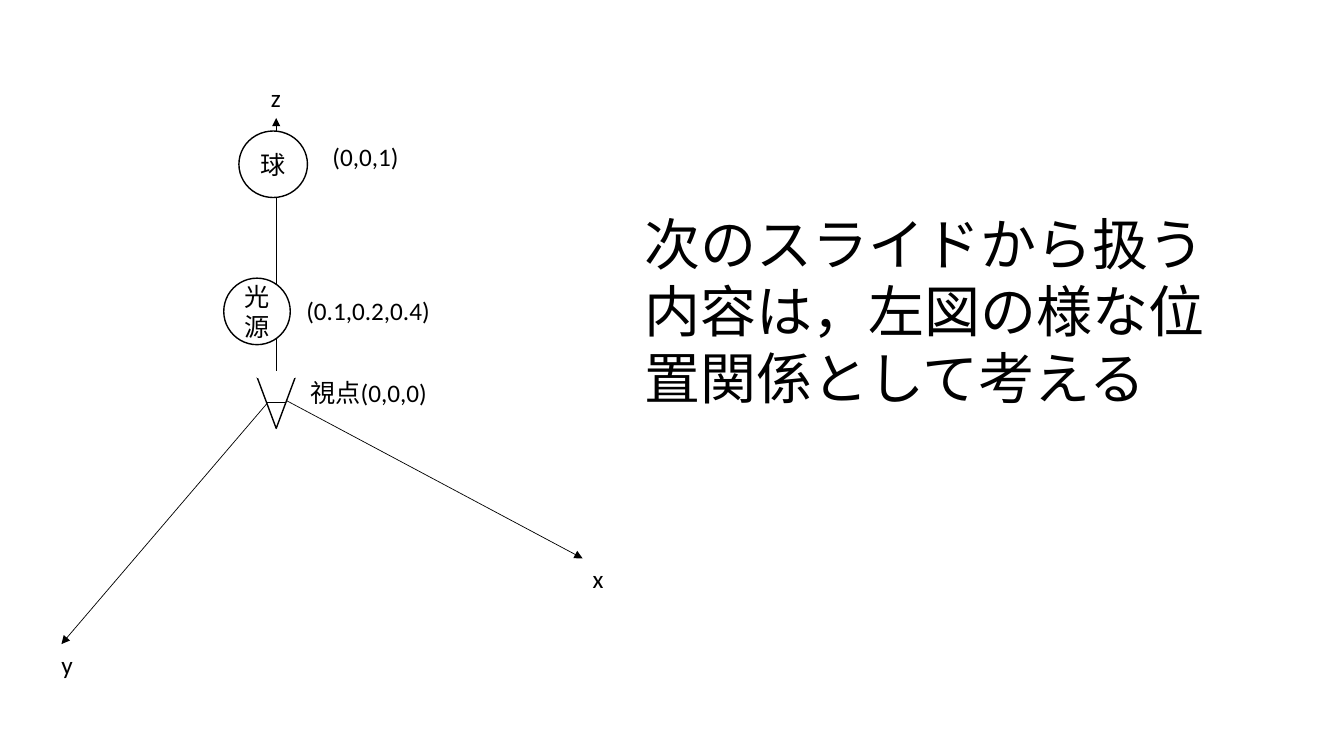
from pptx import Presentation
from pptx import util as u
from pptx.dml.color import RGBColor
from pptx.enum import shapes, text
from pptx.oxml.ns import qn
from lxml import etree

COLORS = {"ink": "000000", "paper": "FFFFFF"}
FONT = "Calibri"
CELL = 0.1
COLS, ROWS = 133.33, 75

ORIGIN = (27.4, 39.2)
AXES = [
    ((27.2, 39.2), (6.1, 63.9)),
    (ORIGIN, (57.8, 55.4)),
    (ORIGIN, (27.4, 11.7)),
]
EYE = (25.5, 37.4, 3.8, 5.1)
EYE_GAP = 0.5
SPHERES = [
    ("光源", (22.2, 27.6, 6.6, 6.6)),
    ("球", (23.7, 13, 6.8, 6.6)),
]
LABELS = [
    ("x", (57.8, 55.4, 9.4, 4), 18),
    ("z", (25.9, 7.7, 9.4, 4), 18),
    ("y", (5.1, 63.9, 9.4, 4), 18),
    ("視点(0,0,0)", (29.8, 36.9, 15.7, 4), 18),
    ("(0.1,0.2,0.4)", (29.4, 28.8, 15.9, 4), 18),
    ("(0,0,1)", (32, 13.5, 14.8, 4), 18),
    ("次のスライドから扱う内容は，左図の様な位置関係として考える",
     (63, 20.3, 59.9, 21.2), 40),
]


def grid(*cells):
    return [u.Inches(c * CELL) for c in cells]


def color(name):
    return RGBColor.from_string(COLORS[name])


def write(sp, words, size, align=text.PP_ALIGN.LEFT):
    tf = sp.text_frame
    tf.word_wrap = True
    p = tf.paragraphs[0]
    p.text = words
    p.alignment = align
    p.font.size = u.Pt(size)
    p.font.name = FONT
    p.font.color.rgb = color("ink")
    return tf


def add_line(s, start, end, arrow=False):
    c = s.shapes.add_connector(shapes.MSO_CONNECTOR.STRAIGHT, *grid(*start, *end))
    c.line.color.rgb = color("ink")
    c.line.width = u.Pt(0.5)
    if arrow:
        etree.SubElement(c.line._get_or_add_ln(), qn("a:tailEnd"), type="triangle")
    etree.SubElement(c._element.spPr, qn("a:effectLst"))


def add_outline(s, kind, box, line="ink"):
    sp = s.shapes.add_shape(kind, *grid(*box))
    sp.shadow.inherit = False
    sp.fill.solid()
    sp.fill.fore_color.rgb = color("paper")
    sp.line.color.rgb = color(line)
    sp.line.width = u.Pt(1)
    return sp


def add_eye(s):
    x, y, w, h = EYE
    kinds = shapes.MSO_SHAPE
    add_outline(s, kinds.ISOSCELES_TRIANGLE, EYE).rotation = 180
    add_outline(s, kinds.RECTANGLE, (x, y - EYE_GAP, w, EYE_GAP), "paper")
    middle = y + h / 2
    add_line(s, (x + w / 4, middle), (x + w * 3 / 4, middle))


def main():
    prs = Presentation()
    prs.slide_width, prs.slide_height = grid(COLS, ROWS)
    s = prs.slides.add_slide(prs.slide_layouts[6])
    for start, end in AXES:
        add_line(s, start, end, arrow=True)
    add_eye(s)
    for words, box in SPHERES:
        sp = add_outline(s, shapes.MSO_SHAPE.OVAL, box)
        tf = write(sp, words, 18, text.PP_ALIGN.CENTER)
        tf.vertical_anchor = text.MSO_ANCHOR.MIDDLE
    for words, box, size in LABELS:
        tf = write(s.shapes.add_textbox(*grid(*box)), words, size)
        tf.auto_size = text.MSO_AUTO_SIZE.SHAPE_TO_FIT_TEXT
    prs.save("out.pptx")


if __name__ == "__main__":
    main()
